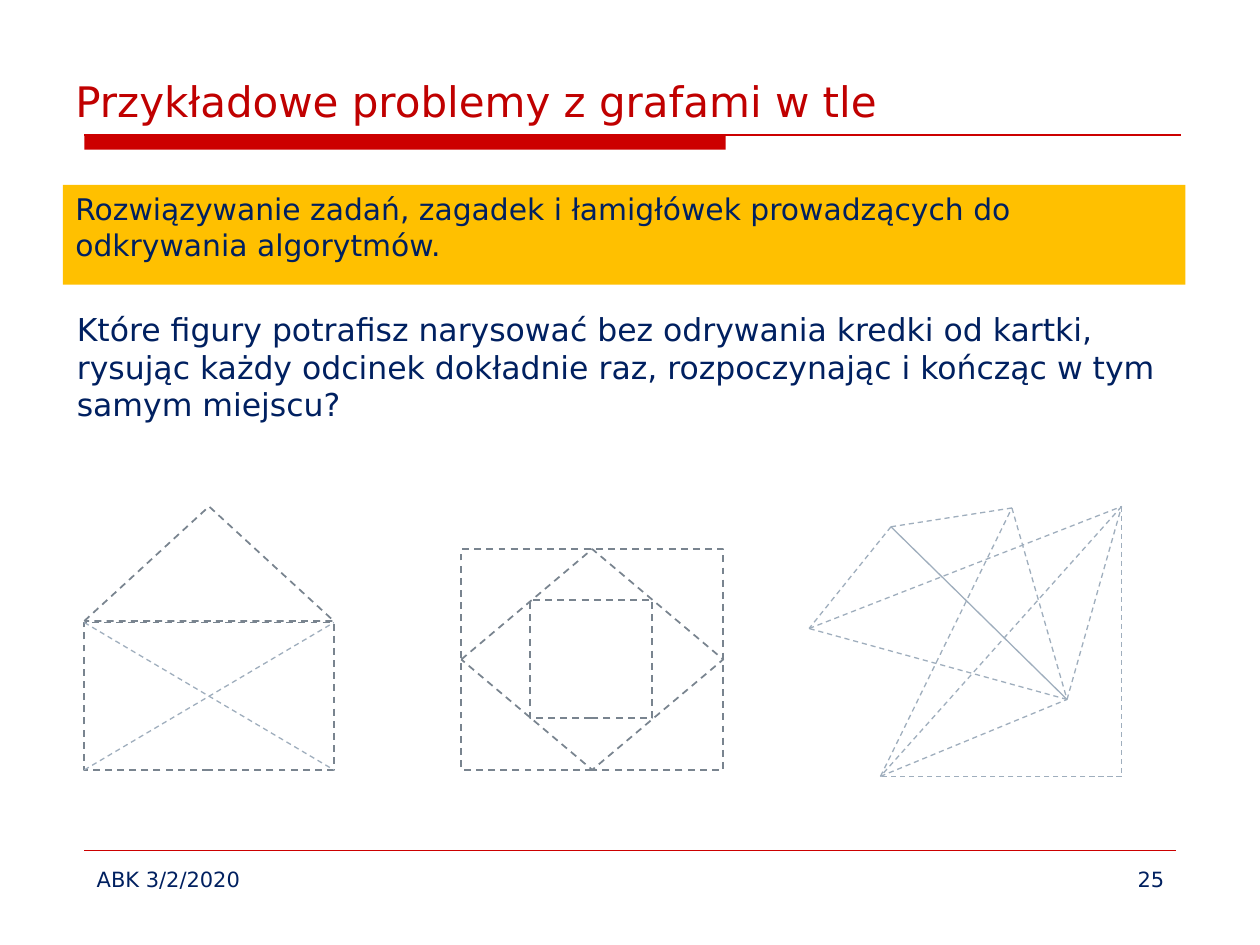
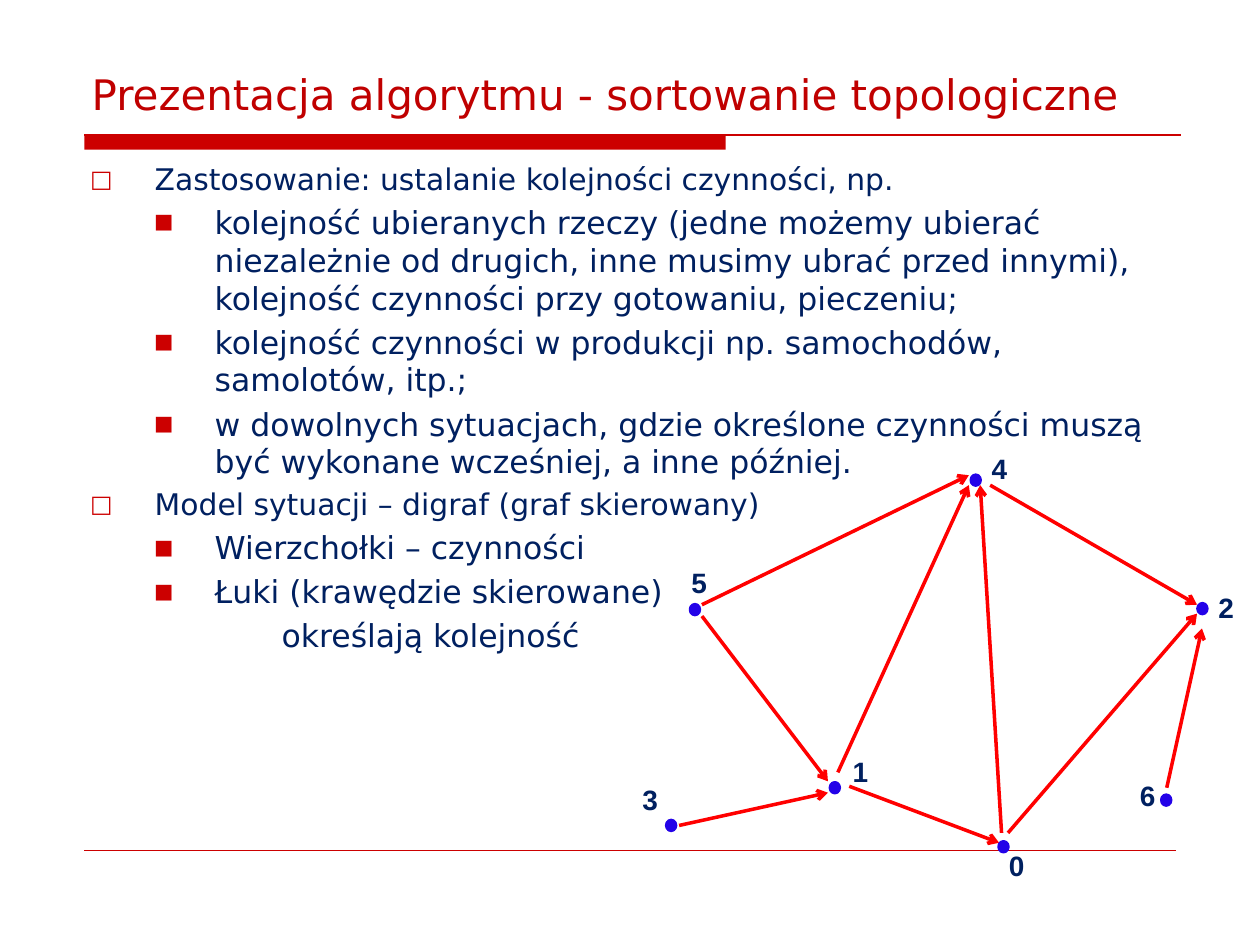
from dataclasses import dataclass
from typing import NamedTuple

from lxml import etree
from pptx import Presentation
from pptx.dml.color import RGBColor
from pptx.enum.dml import MSO_LINE
from pptx.enum.shapes import MSO_CONNECTOR, MSO_SHAPE
from pptx.enum.text import MSO_ANCHOR, PP_ALIGN
from pptx.oxml.ns import qn
from pptx.util import Cm, Pt

RECTANGLE = MSO_SHAPE.RECTANGLE
TRIANGLE = MSO_SHAPE.ISOSCELES_TRIANGLE
DIAMOND = MSO_SHAPE.DIAMOND
ELLIPSE = MSO_SHAPE.OVAL
STRAIGHT = MSO_CONNECTOR.STRAIGHT
DASH = MSO_LINE.DASH
TOP, BOTTOM = MSO_ANCHOR.TOP, MSO_ANCHOR.BOTTOM
LEFT, RIGHT = PP_ALIGN.LEFT, PP_ALIGN.RIGHT

COLOURS = {
    "title": "C00000",
    "text": "002060",
    "rule": "CC0000",
    "band": "FFC000",
    "outline": "79848F",
    "stroke": "9FAEBD",
    "arc": "FF0000",
    "vertex": "2302E8",
}
BODY_FONT = "DejaVu Sans"
LABEL_FONT = "Arial"
MARGIN_LEFT = 1.7
RULE_TOP = 2.72
FOOTER_RULE_TOP = 17.15


class Point(NamedTuple):
    x: float
    y: float


class Box(NamedTuple):
    left: float
    top: float
    width: float
    height: float


class Level(NamedTuple):
    size: float
    margin: float
    hanging: float
    bullet: str = ""
    bullet_percent: int = 100


@dataclass(frozen=True)
class Figure:
    kind: int
    box: Box


@dataclass(frozen=True)
class Vertex:
    name: str
    centre: Point
    label: Point


@dataclass(frozen=True)
class Arc:
    start: Point
    end: Point


TOPIC = Level(17, 1.3, 1.3, "□", 80)
DETAIL = Level(18, 2.51, 1.22, "■", 65)
CONTINUATION = Level(18, 3.86, 0)

ENVELOPE = Box(MARGIN_LEFT, 12.55, 5.03, 2.97)
OUTER_SQUARE = Box(9.3, 11.07, 5.28, 4.45)
FIGURES = [
    Figure(RECTANGLE, ENVELOPE),
    Figure(TRIANGLE, Box(MARGIN_LEFT, 10.21, 5.03, 2.31)),
    Figure(RECTANGLE, OUTER_SQUARE),
    Figure(RECTANGLE, Box(10.69, 12.09, 2.46, 2.39)),
    Figure(DIAMOND, OUTER_SQUARE),
]

CORNERS = {
    "shoulder": Point(17.96, 10.62),
    "apex": Point(20.4, 10.24),
    "upper right": Point(22.61, 10.21),
    "left": Point(16.31, 12.67),
    "hub": Point(21.51, 14.1),
    "lower left": Point(17.75, 15.65),
    "lower right": Point(22.61, 15.65),
}
DASHED_EDGES = [
    ("hub", "upper right"),
    ("upper right", "lower left"),
    ("lower left", "apex"),
    ("hub", "left"),
    ("left", "upper right"),
    ("upper right", "lower right"),
    ("lower right", "lower left"),
    ("lower left", "hub"),
    ("shoulder", "left"),
    ("apex", "hub"),
    ("shoulder", "apex"),
]

VERTICES = [
    Vertex("0", Point(20.23, 17.07), Point(20.09, 17.04)),
    Vertex("1", Point(16.83, 15.88), Point(16.94, 15.14)),
    Vertex("2", Point(24.24, 12.27), Point(24.31, 11.84)),
    Vertex("3", Point(13.53, 16.64), Point(12.7, 15.72)),
    Vertex("4", Point(19.67, 9.68), Point(19.74, 9.04)),
    Vertex("5", Point(14.01, 12.29), Point(13.69, 11.33)),
    Vertex("6", Point(23.51, 16.13), Point(22.73, 15.62)),
]
ARCS = [
    Arc(Point(14.15, 12.19), Point(19.53, 9.58)),
    Arc(Point(14.15, 12.42), Point(16.69, 15.75)),
    Arc(Point(20.19, 16.79), Point(19.76, 9.78)),
    Arc(Point(17.12, 15.85), Point(20.14, 16.99)),
    Arc(Point(20.32, 16.79), Point(24.13, 12.37)),
    Arc(Point(19.96, 9.78), Point(24.13, 12.19)),
    Arc(Point(16.89, 15.57), Point(19.53, 9.78)),
    Arc(Point(13.69, 16.64), Point(16.69, 15.98)),
    Arc(Point(23.52, 15.88), Point(24.23, 12.67)),
]

OUTLINE = [
    (TOPIC, "Zastosowanie: ustalanie kolejności czynności, np."),
    (DETAIL, "kolejność ubieranych rzeczy (jedne możemy ubierać niezależnie od "
             "drugich, inne musimy ubrać przed innymi), kolejność czynności przy "
             "gotowaniu, pieczeniu;"),
    (DETAIL, "kolejność czynności w produkcji np. samochodów, samolotów, itp.;"),
    (DETAIL, "w dowolnych sytuacjach, gdzie określone czynności muszą być "
             "wykonane wcześniej, a inne później."),
    (TOPIC, "Model sytuacji – digraf (graf skierowany)"),
    (DETAIL, "Wierzchołki – czynności"),
    (DETAIL, "Łuki (krawędzie skierowane)"),
    (CONTINUATION, "określają kolejność"),
]


def colour(name: str) -> RGBColor:
    return RGBColor.from_string(COLOURS[name])


def add_figure(slide, kind: int, box: Box, *, fill: str = "", line: str = "",
               width: float = 1, dashed: bool = False):
    shape = slide.shapes.add_shape(kind, *(Cm(length) for length in box))
    shape.shadow.inherit = False
    if fill:
        shape.fill.solid()
        shape.fill.fore_color.rgb = colour(fill)
    else:
        shape.fill.background()
    if line:
        shape.line.color.rgb = colour(line)
        shape.line.width = Pt(width)
        if dashed:
            shape.line.dash_style = DASH
    else:
        shape.line.fill.background()
    return shape


def add_line(slide, start: Point, end: Point, *, line: str, width: float,
             dashed: bool = False, arrow: bool = False) -> None:
    connector = slide.shapes.add_connector(
        STRAIGHT, *(Cm(length) for length in (*start, *end)))
    connector.line.color.rgb = colour(line)
    connector.line.width = Pt(width)
    if dashed:
        connector.line.dash_style = DASH
    properties = connector._element.spPr
    if arrow:
        etree.SubElement(properties.find(qn("a:ln")), qn("a:tailEnd"), type="arrow")
    etree.SubElement(properties, qn("a:effectLst"))


def write_text(paragraph, text: str, *, size: float, font: str = BODY_FONT,
               ink: str = "text", bold: bool = False, align: int = LEFT,
               before: float = 0, spacing: float = 1) -> None:
    paragraph.alignment = align
    paragraph.space_before = Pt(before)
    paragraph.line_spacing = spacing
    run = paragraph.add_run()
    run.text = text
    run.font.size = Pt(size)
    run.font.name = font
    run.font.bold = bold
    run.font.color.rgb = colour(ink)


def add_text_frame(slide, box: Box, *, anchor: int = TOP, wrap: bool = True):
    frame = slide.shapes.add_textbox(*(Cm(length) for length in box)).text_frame
    frame.word_wrap = wrap
    frame.vertical_anchor = anchor
    return frame


def set_level(paragraph, level: Level) -> None:
    properties = paragraph._p.get_or_add_pPr()
    properties.set("marL", str(Cm(level.margin)))
    properties.set("indent", str(-Cm(level.hanging)))
    if level.bullet:
        bullet_colour = etree.SubElement(properties, qn("a:buClr"))
        etree.SubElement(bullet_colour, qn("a:srgbClr"), val=COLOURS["rule"])
        etree.SubElement(properties, qn("a:buSzPct"), val=str(level.bullet_percent * 1000))
        etree.SubElement(properties, qn("a:buFont"), typeface=BODY_FONT)
        etree.SubElement(properties, qn("a:buChar"), char=level.bullet)


def start_slide(presentation, title: str, title_box: Box):
    slide = presentation.slides.add_slide(presentation.slide_layouts[6])
    add_figure(slide, RECTANGLE, Box(MARGIN_LEFT, RULE_TOP, 12.93, 0.3), fill="rule")
    add_line(slide, Point(MARGIN_LEFT, RULE_TOP), Point(23.8, RULE_TOP),
             line="rule", width=0.75)
    add_line(slide, Point(MARGIN_LEFT, FOOTER_RULE_TOP), Point(23.7, FOOTER_RULE_TOP),
             line="rule", width=0.25)
    frame = add_text_frame(slide, title_box, anchor=BOTTOM)
    write_text(frame.paragraphs[0], title, size=24, ink="title")
    return slide


def build_drawing_puzzle(presentation) -> None:
    slide = start_slide(presentation, "Przykładowe problemy z grafami w tle",
                        Box(1.27, -0.08, 22.86, 2.74))
    for left, text, align in ((MARGIN_LEFT, "ABK 3/2/2020", LEFT), (18.21, "25", RIGHT)):
        footer = add_text_frame(slide, Box(left, 17.35, 5.51, 1.32))
        write_text(footer.paragraphs[0], text, size=12, align=align)

    band = add_figure(slide, RECTANGLE, Box(1.27, 3.73, 22.63, 2.01), fill="band")
    band.text_frame.word_wrap = True
    band.text_frame.vertical_anchor = TOP
    write_text(band.text_frame.paragraphs[0],
               "Rozwiązywanie zadań, zagadek i łamigłówek prowadzących do "
               "odkrywania algorytmów.", size=17, before=3.4)
    question = add_text_frame(slide, Box(1.3, 6.12, 22.61, 2.57))
    write_text(question.paragraphs[0],
               "Które figury potrafisz narysować bez odrywania kredki od kartki, "
               "rysując każdy odcinek dokładnie raz, rozpoczynając i kończąc w tym "
               "samym miejscu?", size=18, before=6)

    for figure in FIGURES:
        add_figure(slide, figure.kind, figure.box, line="outline", dashed=True)
    left, top, width, height = ENVELOPE
    for first, last in ((top, top + height), (top + height, top)):
        add_line(slide, Point(left, first), Point(left + width, last),
                 line="stroke", width=0.75, dashed=True)
    add_line(slide, CORNERS["shoulder"], CORNERS["hub"], line="stroke", width=0.75)
    for start, end in DASHED_EDGES:
        add_line(slide, CORNERS[start], CORNERS[end],
                 line="stroke", width=0.75, dashed=True)


def build_topological_sort(presentation) -> None:
    slide = start_slide(presentation, "Prezentacja algorytmu - sortowanie topologiczne",
                        Box(1.6, 0.84, 22.23, 1.68))
    frame = add_text_frame(slide, Box(1.57, 3.12, 22.23, 13.79))
    for index, (level, text) in enumerate(OUTLINE):
        paragraph = frame.add_paragraph() if index else frame.paragraphs[0]
        write_text(paragraph, text, size=level.size, before=level.size * 0.2)
        set_level(paragraph, level)

    for arc in ARCS:
        add_line(slide, arc.start, arc.end, line="arc", width=2, arrow=True)
    width, height = 0.18, 0.2
    for vertex in VERTICES:
        x, y = vertex.centre
        add_figure(slide, ELLIPSE, Box(x - width / 2, y - height / 2, width, height),
                   fill="vertex", line="vertex", width=2)
        label = add_text_frame(slide, Box(*vertex.label, 0.84, 0.89), wrap=False)
        write_text(label.paragraphs[0], vertex.name, size=16, font=LABEL_FONT,
                   bold=True, spacing=0.93)


def main() -> None:
    presentation = Presentation()
    presentation.slide_width = Cm(25.4)
    presentation.slide_height = Cm(19.05)
    build_drawing_puzzle(presentation)
    build_topological_sort(presentation)
    presentation.save("out.pptx")


if __name__ == "__main__":
    main()
